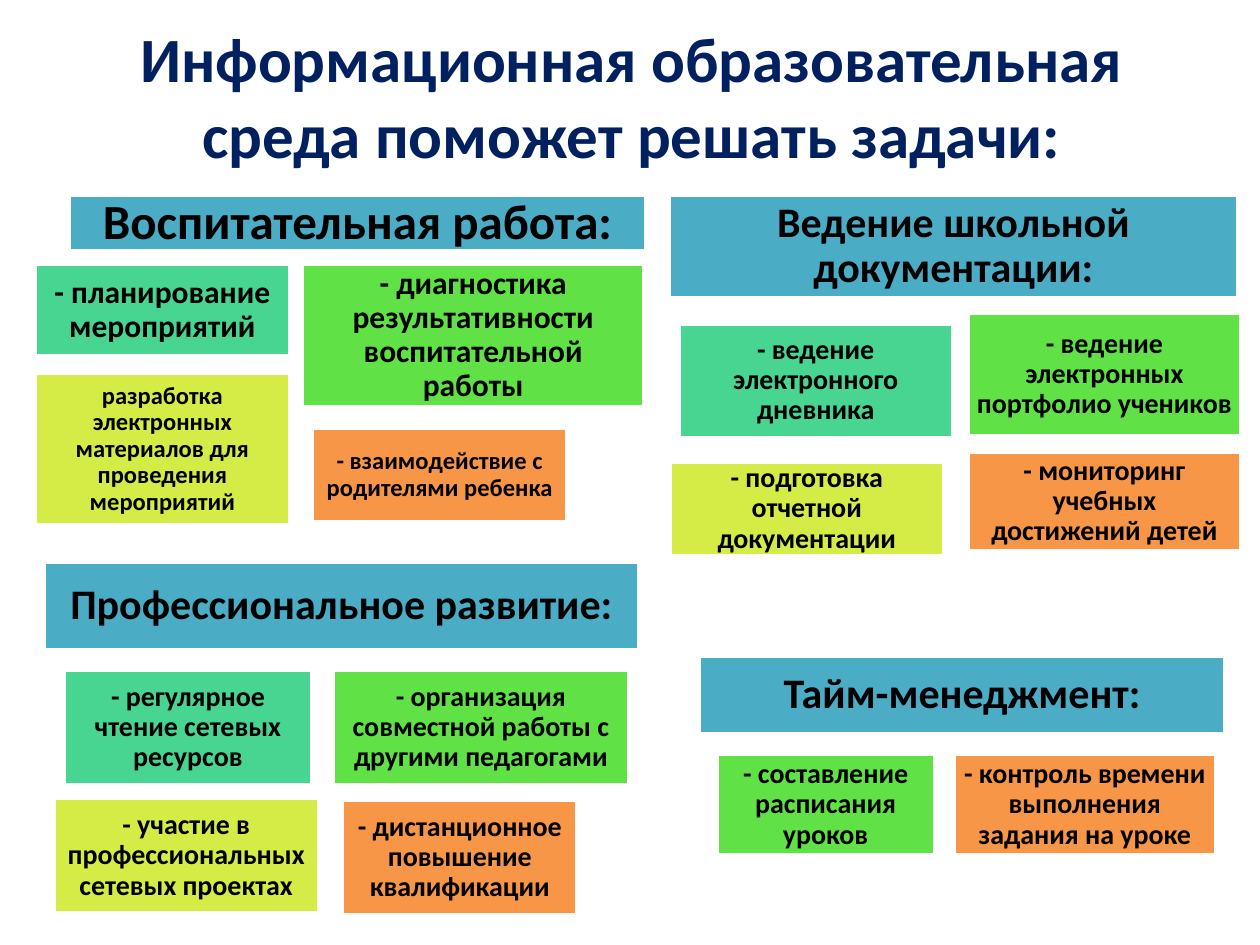
from pptx import Presentation
from pptx.dml.color import RGBColor
from pptx.enum.shapes import MSO_SHAPE
from pptx.enum.text import MSO_ANCHOR, PP_ALIGN
from pptx.util import Cm, Pt

RECTANGLE = MSO_SHAPE.RECTANGLE
MIDDLE = MSO_ANCHOR.MIDDLE
CENTER = PP_ALIGN.CENTER

FONT = "Calibri"
NAVY = RGBColor(0x00, 0x20, 0x60)
BLACK = RGBColor(0x00, 0x00, 0x00)
WHITE = RGBColor(0xFF, 0xFF, 0xFF)
BLUE = RGBColor(0x4B, 0xAC, 0xC6)
TEAL = RGBColor(0x48, 0xD4, 0x91)
GREEN = RGBColor(0x60, 0xE1, 0x46)
LIME = RGBColor(0xD5, 0xEC, 0x46)
ORANGE = RGBColor(0xF7, 0x96, 0x46)

# Each box: text, (left, top, width, height) in cm, font size, fill.
# The first box of a section is its heading.
UPBRINGING = [
    ("Воспитательная работа:", (1.4, 3.94, 11.61, 1.12), 28, BLUE),
    ("- планирование мероприятий", (0.71, 5.33, 5.13, 1.85), 18, TEAL),
    ("- диагностика результативности воспитательной работы",
     (6.1, 5.33, 6.88, 2.87), 18, GREEN),
    ("разработка электронных материалов для проведения мероприятий",
     (0.71, 7.52, 5.13, 3.07), 14, LIME),
    ("- взаимодействие с родителями ребенка",
     (6.3, 8.64, 5.13, 1.88), 14, ORANGE),
]
RECORDS = [
    ("Ведение школьной документации:", (13.49, 3.94, 11.46, 2.06), 24, BLUE),
    ("- ведение электронного дневника", (13.69, 6.53, 5.51, 2.29), 16, TEAL),
    ("- ведение электронных портфолио учеников",
     (19.51, 6.32, 5.51, 2.46), 16, GREEN),
    ("- подготовка отчетной документации",
     (13.51, 9.32, 5.51, 1.88), 16, LIME),
    ("- мониторинг учебных достижений детей",
     (19.51, 9.12, 5.51, 1.98), 16, ORANGE),
]
DEVELOPMENT = [
    ("Профессиональное развитие:", (0.89, 11.33, 11.99, 1.78), 24, BLUE),
    ("- регулярное чтение сетевых ресурсов",
     (1.3, 13.51, 4.98, 2.31), 16, TEAL),
    ("- организация совместной работы с другими педагогами",
     (6.71, 13.51, 5.97, 2.31), 16, GREEN),
    ("- участие в профессиональных сетевых проектах",
     (1.09, 16.1, 5.33, 2.31), 16, LIME),
    ("- дистанционное повышение квалификации",
     (6.91, 16.13, 4.72, 2.31), 16, ORANGE),
]
TIME_MANAGEMENT = [
    ("Тайм-менеджмент:", (14.1, 13.23, 10.59, 1.57), 24, BLUE),
    ("- составление расписания уроков",
     (14.45, 15.21, 4.39, 2.03), 16, GREEN),
    ("- контроль времени выполнения задания на уроке",
     (19.23, 15.21, 5.28, 2.03), 16, ORANGE),
]


def write_text(frame, text, size, color):
    """Fill a frame with one bold, centred paragraph."""
    frame.word_wrap = True
    frame.vertical_anchor = MIDDLE
    paragraph = frame.paragraphs[0]
    paragraph.text = text
    paragraph.alignment = CENTER
    font = paragraph.font
    font.name = FONT
    font.size = Pt(size)
    font.bold = True
    font.color.rgb = color
    return paragraph


def add_title(slide, text):
    title = slide.shapes.add_textbox(Cm(1.3), Cm(0.33), Cm(22.86), Cm(3.18))
    write_text(title.text_frame, text, 36, NAVY)


def add_box(slide, text, bounds, size, fill):
    box = slide.shapes.add_shape(RECTANGLE, *map(Cm, bounds))
    box.shadow.inherit = False
    box.fill.solid()
    box.fill.fore_color.rgb = fill
    box.line.color.rgb = WHITE
    box.line.width = Pt(2)
    frame = box.text_frame
    # Margins grow with the font size
    margin = Pt(0.3 * size)
    frame.margin_left = frame.margin_right = margin
    frame.margin_top = frame.margin_bottom = margin
    write_text(frame, text, size, BLACK).line_spacing = 0.9


def add_section(slide, boxes):
    for box in boxes:
        add_box(slide, *box)


def main():
    prs = Presentation()
    prs.slide_width, prs.slide_height = Cm(25.4), Cm(19.05)
    slide = prs.slides.add_slide(prs.slide_layouts[6])

    # Title
    add_title(slide, "Информационная образовательная среда поможет решать задачи:")

    # Four groups of tasks
    for section in (UPBRINGING, RECORDS, DEVELOPMENT, TIME_MANAGEMENT):
        add_section(slide, section)

    prs.save("out.pptx")


if __name__ == "__main__":
    main()
